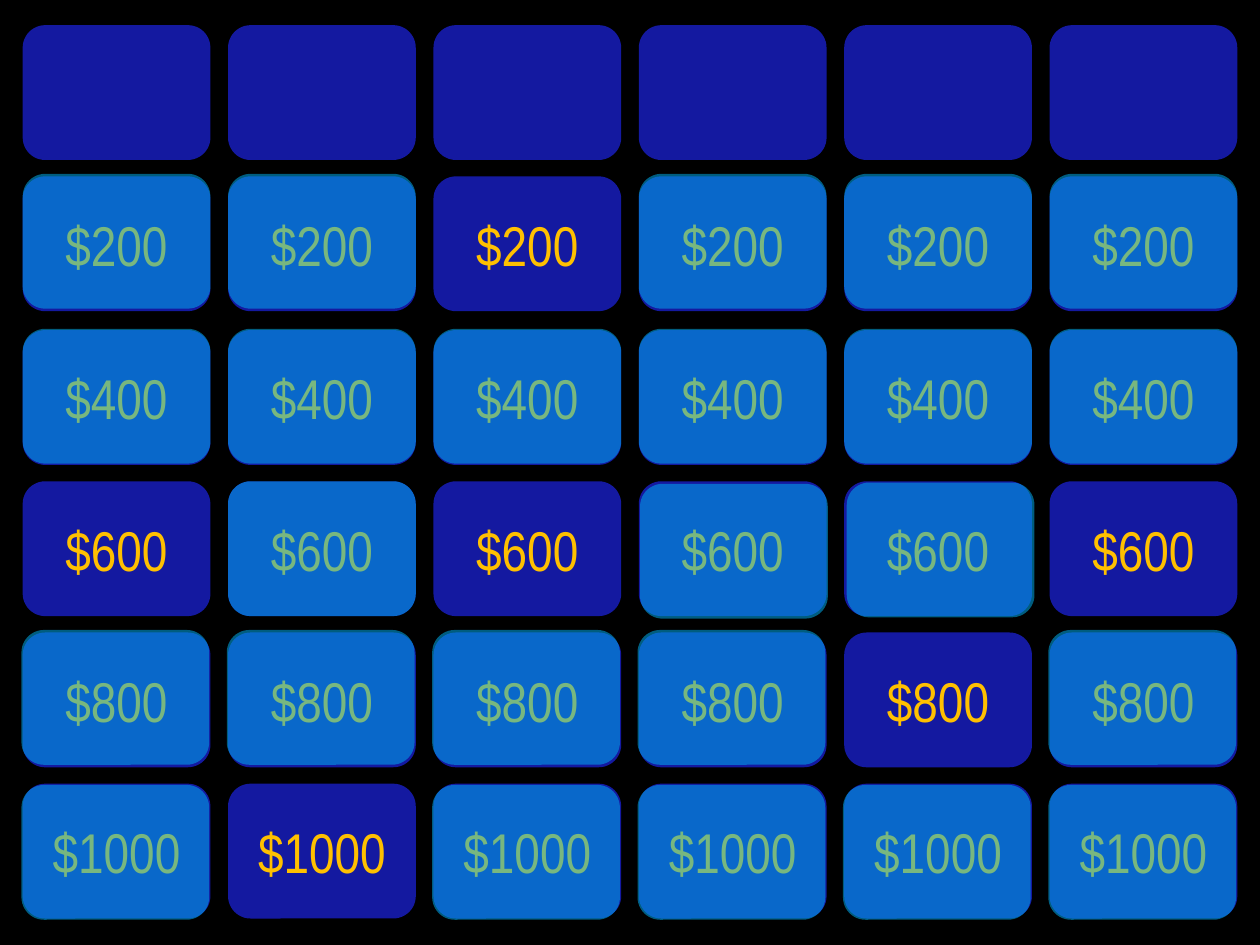
from lxml.etree import SubElement
from pptx import Presentation
from pptx.dml.color import RGBColor as RGB
from pptx.enum.shapes import MSO_SHAPE as Shape
from pptx.enum.text import MSO_ANCHOR as Anchor, PP_ALIGN as Align
from pptx.oxml.ns import qn
from pptx.util import Pt

COLORS = {"background": "000000", "tile": "1419A0", "value": "FFC000", "cover": "00B0F0"}
COVER_OPACITY = 53
COLUMN_COUNT = 6

# The first row holds the blank category tiles.
# Each row: top, label, {covered column: (x, y) offset of the cover}
ROWS = [
    (14.4, "", {}),
    (100.8, "$200", dict.fromkeys((0, 1, 3, 4, 5), (0, -1.44))),
    (188.64, "$400", dict.fromkeys(range(COLUMN_COUNT), (0, -0.72))),
    (275.04, "$600", {1: (0, 0), 3: (0.72, 1.44), 4: (1.44, 0.72)}),
    (361.44, "$800", dict.fromkeys((0, 1, 2, 3, 5), (-0.72, -1.44))),
    (447.84, "$1000", dict.fromkeys((0, 2, 3, 4, 5), (-0.72, 0.72))),
]

LEFT, COLUMN_STEP = 12.96, 117.36
TILE_WIDTH, TILE_HEIGHT = 107.28, 77.04


def add_tile(slide, left, top, color):
    tile = slide.shapes.add_shape(
        Shape.ROUNDED_RECTANGLE, Pt(left), Pt(top), Pt(TILE_WIDTH), Pt(TILE_HEIGHT))
    tile.shadow.inherit = False
    tile.fill.solid()
    tile.fill.fore_color.rgb = RGB.from_string(COLORS[color])
    tile.line.fill.background()
    return tile


def add_value(tile, label):
    frame = tile.text_frame
    frame.vertical_anchor = Anchor.MIDDLE
    paragraph = frame.paragraphs[0]
    paragraph.text = label
    paragraph.alignment = Align.CENTER
    paragraph.font.name = "Arial Narrow"
    paragraph.font.size = Pt(32)
    paragraph.font.color.rgb = RGB.from_string(COLORS["value"])


def set_opacity(shape, percent):
    color = shape.fill._xPr.find(qn("a:solidFill"))[0]
    SubElement(color, qn("a:alpha"), val=str(percent * 1000))


def main():
    presentation = Presentation()
    presentation.slide_width, presentation.slide_height = Pt(720), Pt(540)
    slide = presentation.slides.add_slide(presentation.slide_layouts[6])
    slide.background.fill.solid()
    slide.background.fill.fore_color.rgb = RGB.from_string(COLORS["background"])

    lefts = [LEFT + column * COLUMN_STEP for column in range(COLUMN_COUNT)]
    for top, label, covers in ROWS:
        for left in lefts:
            tile = add_tile(slide, left, top, "tile")
            if label:
                add_value(tile, label)
        for column, (x_offset, y_offset) in covers.items():
            cover = add_tile(slide, lefts[column] + x_offset, top + y_offset, "cover")
            set_opacity(cover, COVER_OPACITY)

    presentation.save("out.pptx")


if __name__ == "__main__":
    main()
